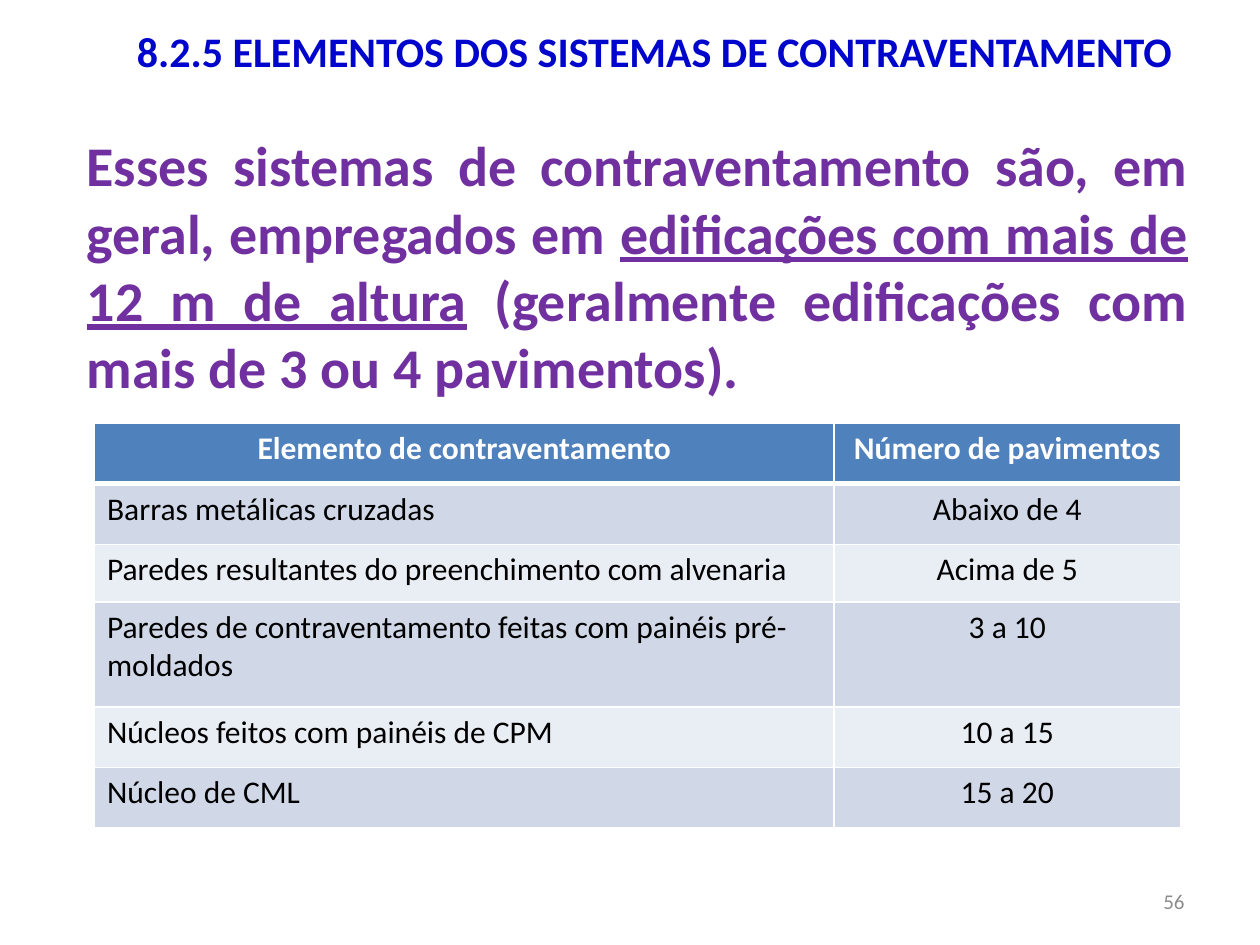
from pptx import Presentation
from pptx.dml.color import RGBColor
from pptx.enum.text import MSO_ANCHOR as Anchor, PP_ALIGN as Align
from pptx.oxml.ns import qn
from pptx.util import Pt
from lxml.etree import SubElement

COLORS = {
    "title": "0005CC",
    "body": "7030A0",
    "number": "8C8C8C",
    "header": "4F81BD",
    "odd": "D0D8E8",
    "even": "E9EDF4",
    "white": "FFFFFF",
    "black": "000000",
}
COLUMN_WIDTHS = [422.64, 198]
ROW_HEIGHTS = [34.56, 34.56, 33.12, 59.76, 34.56, 34.56]
ROWS = [
    ("Elemento de contraventamento", "Número de pavimentos"),
    ("Barras metálicas cruzadas", "Abaixo de 4"),
    ("Paredes resultantes do preenchimento com alvenaria", "Acima de 5"),
    ("Paredes de contraventamento feitas com painéis pré-moldados", "3 a 10"),
    ("Núcleos feitos com painéis de CPM", "10 a 15"),
    ("Núcleo de CML", "15 a 20"),
]


class SlideBuilder:
    font_name = "Calibri"

    def __init__(self, slide):
        self.slide = slide

    def style(self, paragraph, size, color, align, bold=False):
        paragraph.alignment = align
        font = paragraph.font
        font.name, font.size, font.bold = self.font_name, Pt(size), bold
        font.color.rgb = RGBColor.from_string(COLORS[color])

    def text(self, box, runs, size, color, align, bold=False, anchor=Anchor.MIDDLE):
        """Add a text box; runs are (text, underlined) pairs."""
        shape = self.slide.shapes.add_textbox(*map(Pt, box))
        frame = shape.text_frame
        frame.word_wrap = True
        frame.vertical_anchor = anchor
        paragraph = frame.paragraphs[0]
        for content, underlined in runs:
            run = paragraph.add_run()
            run.text = content
            if underlined:
                run.font.underline = True
        self.style(paragraph, size, color, align, bold)

    def borders(self, cell, top, bottom):
        """Draw white cell borders, 1 pt at the sides."""
        properties = cell._tc.get_or_add_tcPr()
        for side, width in (("L", 1), ("R", 1), ("T", top), ("B", bottom)):
            line = SubElement(properties, qn(f"a:ln{side}"), w=str(Pt(width)))
            fill = SubElement(line, qn("a:solidFill"))
            SubElement(fill, qn("a:srgbClr"), val=COLORS["white"])

    def table(self, left, top, widths, heights, rows):
        frame = self.slide.shapes.add_table(
            len(rows), len(widths), Pt(left), Pt(top), Pt(sum(widths)), Pt(sum(heights)))
        table = frame.table
        for column, width in zip(table.columns, widths):
            column.width = Pt(width)
        for row_index, (height, values) in enumerate(zip(heights, rows)):
            table.rows[row_index].height = Pt(height)
            is_header = row_index == 0
            fill = "header" if is_header else "odd" if row_index % 2 else "even"
            for column_index, value in enumerate(values):
                cell = table.cell(row_index, column_index)
                cell.text = value
                self.borders(cell, 3 if row_index == 1 else 1, 3 if is_header else 1)
                cell.fill.solid()
                cell.fill.fore_color.rgb = RGBColor.from_string(COLORS[fill])
                centered = is_header or column_index == 1
                self.style(cell.text_frame.paragraphs[0], 18,
                           "white" if is_header else "black",
                           Align.CENTER if centered else Align.LEFT, is_header)


def main():
    presentation = Presentation()
    presentation.slide_width, presentation.slide_height = Pt(720), Pt(540)
    builder = SlideBuilder(presentation.slides.add_slide(presentation.slide_layouts[6]))

    builder.text((516.24, 500.4, 167.76, 28.8), [("56", False)], 12, "number", Align.RIGHT)
    builder.text((42.48, 9.36, 663.12, 39.6),
                 [("8.2.5 ELEMENTOS DOS SISTEMAS DE CONTRAVENTAMENTO", False)],
                 24, "title", Align.CENTER, bold=True)
    builder.text((42.48, 71.28, 643.68, 162.72), [
        ("Esses sistemas de contraventamento são, em geral, empregados em ", False),
        ("edificações com mais de 12 m de altura", True),
        (" (geralmente edificações com mais de 3 ou 4 pavimentos).", False),
    ], 32, "body", Align.JUSTIFY, bold=True, anchor=Anchor.TOP)
    builder.table(54, 241.92, COLUMN_WIDTHS, ROW_HEIGHTS, ROWS)

    presentation.save("out.pptx")


if __name__ == "__main__":
    main()
